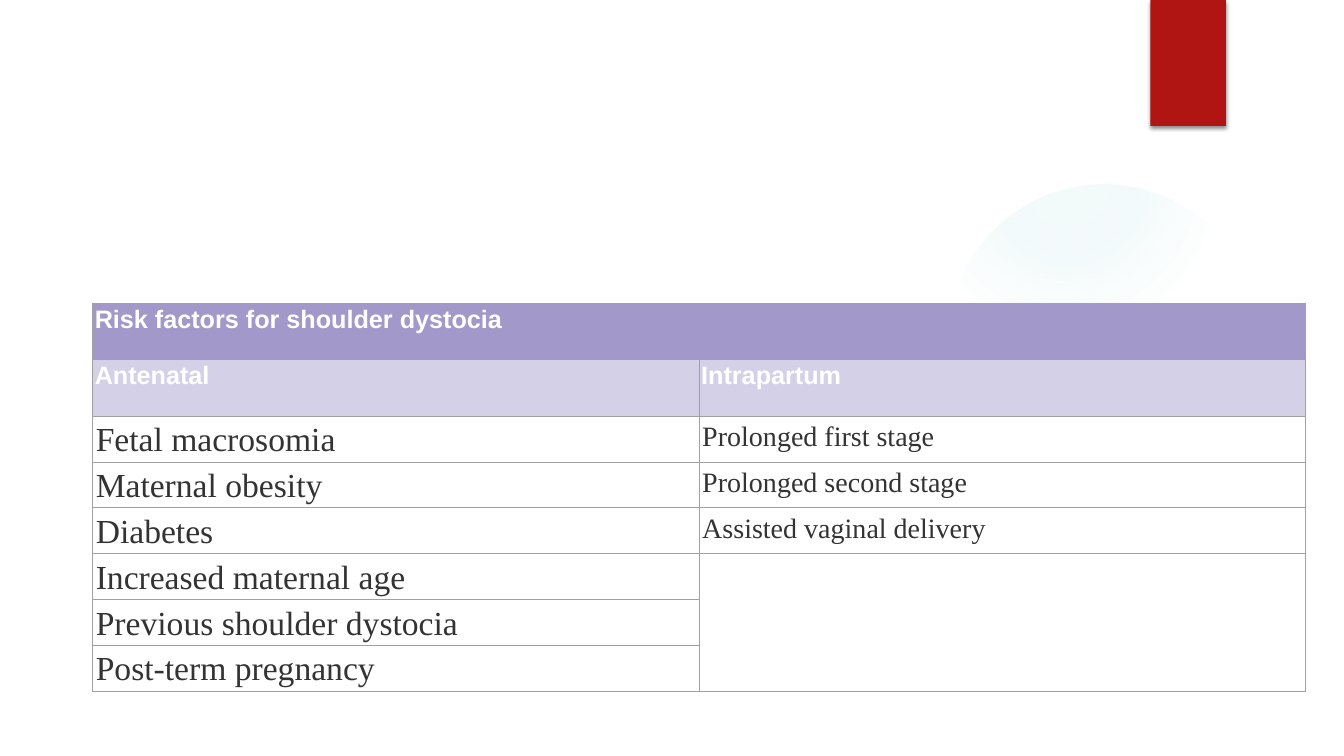
from dataclasses import dataclass

from lxml import etree
from pptx import Presentation
from pptx import util as u
from pptx.dml.color import RGBColor
from pptx.enum import shapes
from pptx.oxml import parse_xml
from pptx.oxml.ns import nsdecls, qn


@dataclass(frozen=True)
class Theme:
    red: str = "B01513"
    glow: str = "50B9C1"
    head: str = "A299CA"
    sub: str = "D4D0E8"
    white: str = "FFFFFF"
    ink: str = "333333"
    line: str = "A1A1A1"
    sans: str = "Arial"
    serif: str = "Times New Roman"
    small: int = 18
    mid: int = 20
    large: int = 24


def write(frame, words, size, font, color, bold=False, space=None):
    para = frame.paragraphs[0]
    if space:
        para.line_spacing = space
    run = para.add_run()
    run.text = words
    run.font.size = u.Pt(size)
    run.font.name = font
    run.font.bold = bold
    run.font.color.rgb = RGBColor.from_string(color)


class Deck:
    def __init__(self, theme):
        self.theme = theme
        self.prs = Presentation()
        self.prs.slide_width = u.Inches(13.33)
        self.prs.slide_height = u.Inches(7.5)
        self.slide = self.prs.slides.add_slide(self.prs.slide_layouts[6])

    def shape(self, kind, box, color):
        item = self.slide.shapes.add_shape(kind, *map(u.Inches, box))
        item.shadow.inherit = False
        item.fill.solid()
        item.fill.fore_color.rgb = RGBColor.from_string(color)
        item.line.fill.background()
        return item

    def glow(self, box, stops):
        """Draw a circle that fades out; stops are (position, opacity) in percent."""
        item = self.shape(shapes.MSO_SHAPE.OVAL, box, self.theme.glow)
        marks = "".join(
            f'<a:gs pos="{pos * 1000}"><a:srgbClr val="{self.theme.glow}">'
            f'<a:alpha val="{alpha * 1000}"/></a:srgbClr></a:gs>'
            for pos, alpha in stops)
        fill = parse_xml(
            f'<a:gradFill {nsdecls("a")} rotWithShape="1"><a:gsLst>{marks}</a:gsLst>'
            '<a:path path="circle"><a:fillToRect l="38000" t="-20000" '
            'r="62000" b="120000"/></a:path></a:gradFill>')
        props = item.fill._xPr
        props.replace(props.find(qn("a:solidFill")), fill)

    def tab(self, box):
        """Draw the red marker with its soft shadow."""
        item = self.shape(shapes.MSO_SHAPE.RECTANGLE, box, self.theme.red)
        effects = item.fill._xPr.find(qn("a:effectLst"))
        shade = etree.SubElement(effects, qn("a:outerShdw"), blurRad=str(u.Pt(3)),
                                 dist=str(u.Pt(2)), dir="5400000", rotWithShape="0")
        color = etree.SubElement(shade, qn("a:srgbClr"), val="000000")
        etree.SubElement(color, qn("a:alpha"), val="45000")

    def table(self, box, heights, cols):
        rows = len(heights)
        grid = self.slide.shapes.add_table(rows, cols, *map(u.Inches, box)).table
        for row, height in zip(grid.rows, heights):
            row.height = u.Inches(height)
        return grid

    def cell(self, cell, fill, pad):
        cell.margin_left = cell.margin_right = u.Inches(pad)
        cell.margin_top = cell.margin_bottom = u.Inches(pad)
        props = cell._tc.get_or_add_tcPr()
        for side in ("lnL", "lnR", "lnT", "lnB"):
            line = etree.SubElement(props, qn(f"a:{side}"), w=str(u.Pt(0.75)))
            paint = etree.SubElement(line, qn("a:solidFill"))
            etree.SubElement(paint, qn("a:srgbClr"), val=self.theme.line)
        cell.fill.solid()
        cell.fill.fore_color.rgb = RGBColor.from_string(fill)


def main():
    theme = Theme()
    deck = Deck(theme)
    deck.glow((9.41, 1.83, 3.08, 3.08), [(0, 7), (36, 6), (69, 0)])
    deck.tab((11.41, 0, 0.75, 1.25))

    heads = [("Risk factors for shoulder dystocia", ""), ("Antenatal", "Intrapartum")]
    risks = [
        ("Fetal macrosomia", "Prolonged first stage"),
        ("Maternal obesity", "Prolonged second stage"),
        ("Diabetes", "Assisted vaginal delivery"),
        ("Increased maternal age", ""),
        ("Previous shoulder dystocia", ""),
        ("Post-term pregnancy", ""),
    ]
    high, tall = 3.85, 0.56
    low = (high - tall * len(heads)) / len(risks)
    heights = [tall] * len(heads) + [low] * len(risks)
    grid = deck.table((0.92, 3.01, 12.03, high), heights, 2)
    fills = [theme.head, theme.sub] + [theme.white] * len(risks)
    for i, (pair, fill) in enumerate(zip(heads + risks, fills)):
        top = i < len(heads)
        for j, words in enumerate(pair):
            cell = grid.cell(i, j)
            deck.cell(cell, fill, 0.02 if top else 0.03)
            if not words:
                continue
            if top:
                write(cell.text_frame, words, theme.small, theme.sans, theme.white, bold=True)
            else:
                size = theme.mid if j else theme.large
                write(cell.text_frame, words, size, theme.serif, theme.ink, space=1.07)
    grid.cell(0, 0).merge(grid.cell(0, 1))
    grid.cell(5, 1).merge(grid.cell(7, 1))
    deck.prs.save("out.pptx")


if __name__ == "__main__":
    main()
